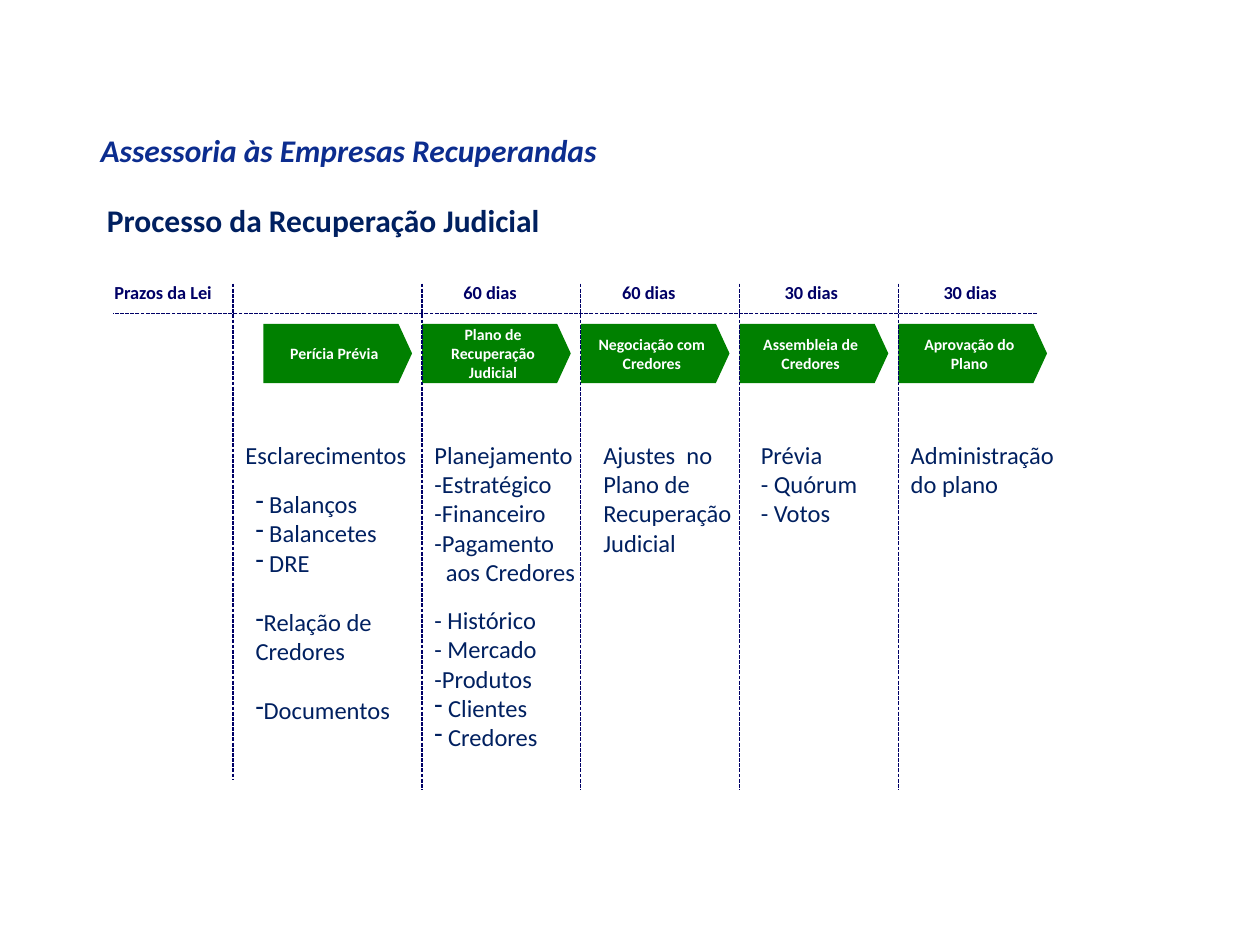
from lxml import etree
from pptx import Presentation
from pptx.dml.color import RGBColor
from pptx.enum.dml import MSO_LINE
from pptx.enum.shapes import MSO_CONNECTOR, MSO_SHAPE
from pptx.enum.text import MSO_ANCHOR, PP_ALIGN
from pptx.oxml.ns import qn
from pptx.util import Inches, Pt

COLORS = {"title": "0C2D8F", "body": "002060", "term": "000066",
          "stage": "008000", "white": "FFFFFF"}
FONT = "Calibri"
PITCH = 1.26
FIRST_X = 2.09
STAGES = ["Perícia Prévia", "Plano de Recuperação Judicial", "Negociação com Credores",
          "Assembleia de Credores", "Aprovação do Plano"]
TERMS = [(0.81, 0.99, "Prazos da Lei"), (3.58, 0.7, "60 dias"), (4.84, 0.7, "60 dias"),
         (6.13, 0.7, "30 dias"), (7.39, 0.7, "30 dias")]
DETAILS = [
    ((1.85, 3.44, 1.5, 0.57), [("Esclarecimentos", {})]),
    ((3.35, 3.44, 1.34, 1.28), [("Planejamento -Estratégico", {}), ("-Financeiro", {}),
                               ("-Pagamento aos Credores", {"hang": 0.09})]),
    ((4.69, 3.44, 1.26, 1.04), [("Ajustes  no Plano de Recuperação Judicial", {})]),
    ((5.94, 3.44, 1.26, 0.81), [("Prévia", {}), ("- Quórum", {}), ("- Votos", {})]),
    ((7.13, 3.44, 1.34, 0.57), [("Administração do plano", {})]),
    ((3.35, 4.75, 1.26, 1.28), [("- Histórico", {}), ("- Mercado", {}), ("-Produtos", {}),
                               (" Clientes", {"dash": True}), (" Credores", {"dash": True})]),
    ((1.93, 3.83, 1.5, 1.99), [(" Balanços", {"dash": True}), (" Balancetes", {"dash": True}),
                              (" DRE", {"dash": True}),
                              ("Relação de Credores", {"dash": True, "gap": 17}),
                              ("Documentos", {"dash": True, "gap": 17})]),
]


def add_run(p, text, size, color, bold=False, italic=False):
    r = p.add_run()
    r.text = text
    f = r.font
    f.name, f.size, f.bold, f.italic = FONT, Pt(size), bold, italic
    f.color.rgb = RGBColor.from_string(COLORS[color])


def format_paragraph(p, dash=False, hang=0, gap=0):
    if gap:
        p.space_before = Pt(gap)
    pPr = p._p.get_or_add_pPr()
    if hang:
        pPr.set("marL", str(Inches(hang)))
        pPr.set("indent", str(-Inches(hang)))
    if dash:
        etree.SubElement(pPr, qn("a:buFontTx"))
        etree.SubElement(pPr, qn("a:buChar")).set("char", "-")


def add_text(s, box, paragraphs, size, color, wrap=True, **style):
    tf = s.shapes.add_textbox(*map(Inches, box)).text_frame
    tf.word_wrap = wrap
    for i, (text, layout) in enumerate(paragraphs):
        p = tf.add_paragraph() if i else tf.paragraphs[0]
        format_paragraph(p, **layout)
        add_run(p, text, size, color, **style)


def add_dashed_line(s, x1, y1, x2, y2):
    line = s.shapes.add_connector(MSO_CONNECTOR.STRAIGHT, *map(Inches, (x1, y1, x2, y2)))
    line.line.color.rgb = RGBColor.from_string(COLORS["term"])
    line.line.width = Pt(0.75)
    line.line.dash_style = MSO_LINE.SQUARE_DOT
    etree.SubElement(line._element.spPr, qn("a:effectLst"))


def add_stage(s, x, y, w, h, text):
    sp = s.shapes.add_shape(MSO_SHAPE.PENTAGON, *map(Inches, (x, y, w, h)))
    sp.adjustments[0] = 0.23
    sp.shadow.inherit = False
    sp.fill.solid()
    sp.fill.fore_color.rgb = RGBColor.from_string(COLORS["stage"])
    sp.line.fill.background()
    tf = sp.text_frame
    tf.word_wrap = True
    tf.vertical_anchor = MSO_ANCHOR.MIDDLE
    p = tf.paragraphs[0]
    p.alignment = PP_ALIGN.CENTER
    add_run(p, text, 9, "white", bold=True)


def add_headings(s, x, y):
    add_text(s, (x, y, 8.55, 0.4), [("Assessoria às Empresas Recuperandas", {})],
             18, "title", bold=True, italic=True)
    add_text(s, (x + 0.05, y + 0.56, 3.66, 0.4), [("Processo da Recuperação Judicial", {})],
             18, "body", wrap=False, bold=True)


def add_stages(s, x, y):
    for i, text in enumerate(STAGES):
        left = x if i == 0 else x + PITCH * i
        add_stage(s, left, y, 1.18, 0.47, text)


def add_terms(s, y):
    add_dashed_line(s, 1.85, y + 0.07, 1.85, 6.19)
    for i in range(1, len(STAGES)):
        x = FIRST_X + PITCH * i
        add_dashed_line(s, x, y + 0.07, x, 6.27)
    add_dashed_line(s, 8.23, y + 0.31, 0.9, y + 0.31)
    for x, w, text in TERMS:
        add_text(s, (x, y, w, 0.28), [(text, {})], 10.5, "term", wrap=False, bold=True)


def add_details(s):
    for box, paragraphs in DETAILS:
        add_text(s, box, paragraphs, 14, "body")


def main():
    prs = Presentation()
    prs.slide_width, prs.slide_height = Inches(10), Inches(7.5)
    s = prs.slides.add_slide(prs.slide_layouts[6])
    add_headings(s, 0.7, 0.99)
    add_stages(s, FIRST_X, 2.57)
    add_terms(s, 2.18)
    add_details(s)
    prs.save("out.pptx")


if __name__ == "__main__":
    main()
